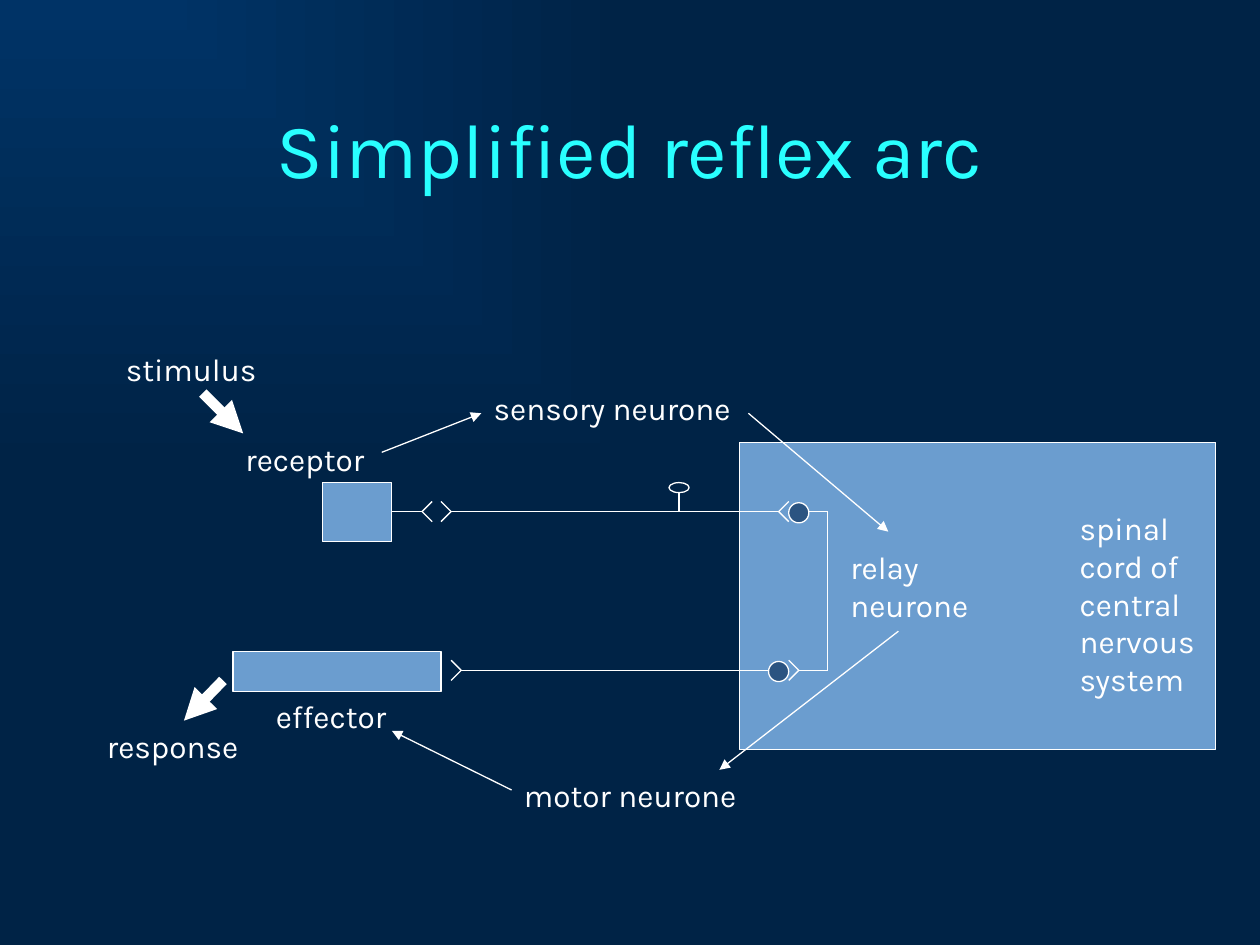
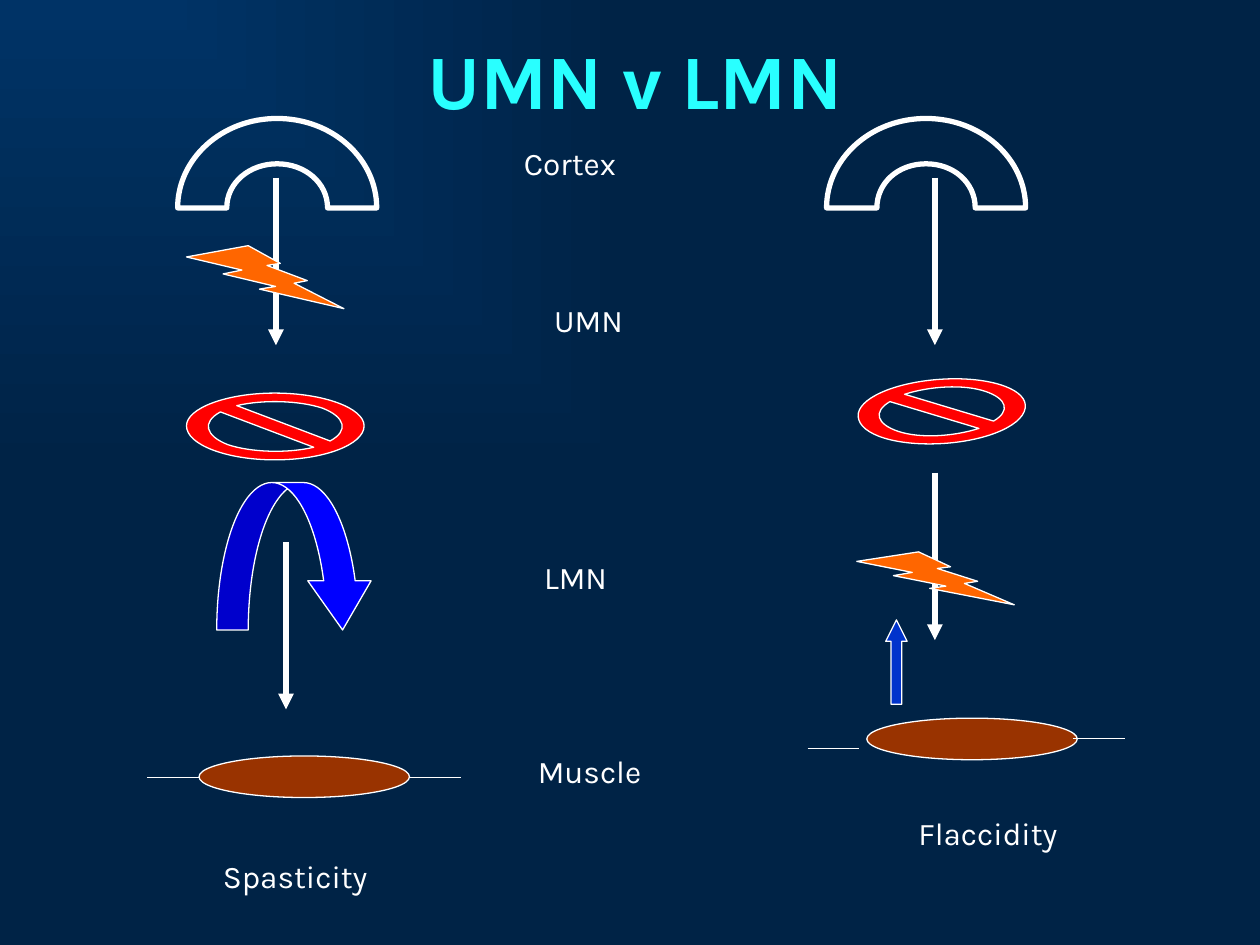
"""Build two slides on reflex arcs and on upper versus lower motor neurone lesions."""
from dataclasses import dataclass
from math import ceil, cos, radians, sin, tan

from lxml import etree
from pptx import Presentation
from pptx.dml.color import RGBColor
from pptx.enum.shapes import MSO_CONNECTOR, MSO_SHAPE
from pptx.enum.text import MSO_ANCHOR, PP_ALIGN
from pptx.oxml import parse_xml
from pptx.oxml.ns import nsdecls, qn
from pptx.util import Inches, Pt


@dataclass(frozen=True)
class Theme:
    font: str = "Karla"
    title_size: int = 44
    label_size: int = 18
    thin: float = 0.75
    medium: float = 3
    heavy: float = 6
    glow: str = "003366"
    night: str = "002346"
    title: str = "29FFFF"
    ink: str = "FFFFFF"
    tissue: str = "6B9DCF"
    cell_body: str = "2B5481"
    muscle: str = "993300"
    lesion: str = "FF6600"
    blocked: str = "FF0000"
    hyperreflexia: str = "0000FF"
    weak_reflex: str = "0033CC"


THEME = Theme()
WIDTH, HEIGHT = Inches(10), Inches(7.5)
COLUMNS = 1000
CELL = WIDTH // COLUMNS

SENSORY_ROW, MOTOR_ROW = 406, 532
BRANCH = 8

REFLEX_TITLE = ("Simplified reflex arc", (50, 42, 900, 150), False)
REFLEX_LABELS = [
    ("stimulus", (90, 273, 126, 40)),
    ("receptor", (185, 344, 134, 40)),
    ("sensory neurone", (382, 304, 291, 40)),
    ("spinal cord of central nervous system", (847, 399, 134, 160)),
    ("relay neurone", (665, 430, 149, 70)),
    ("motor neurone", (406, 611, 228, 40)),
    ("effector", (209, 548, 142, 40)),
    ("response", (75, 572, 165, 40)),
]
TISSUES = [
    (587, 351, 378, 244),
    (256, 383, 55, 47),
    (185, 517, 165, 32),
]
NERVE_FIBRES = [
    (311, SENSORY_ROW, 335, SENSORY_ROW),
    (358, SENSORY_ROW, 618, SENSORY_ROW),
    (539, 391, 539, SENSORY_ROW),
    (642, SENSORY_ROW, 657, SENSORY_ROW),
    (657, SENSORY_ROW, 657, MOTOR_ROW),
    (657, MOTOR_ROW, 634, MOTOR_ROW),
    (610, MOTOR_ROW, 366, MOTOR_ROW),
]
FORKS = [
    (335, SENSORY_ROW, BRANCH),
    (358, SENSORY_ROW, -BRANCH),
    (618, SENSORY_ROW, BRANCH),
    (634, MOTOR_ROW, -BRANCH),
    (366, MOTOR_ROW, -BRANCH),
]
CELL_BODIES = [
    ((531, 383, 16, 8), None),
    ((626, SENSORY_ROW - 7, 16, 16), THEME.cell_body),
    ((610, MOTOR_ROW - 7, 16, 16), THEME.cell_body),
]
SIGNAL_ARROWS = [
    (303, 359, 382, 328),
    (594, 328, 705, 422),
    (713, 501, 571, 611),
    (406, 627, 311, 580),
]
OUTSIDE_ARROWS = [(161, 312, 193, 344), (177, 540, 146, 572)]

LESION_TITLE = ("UMN v LMN", (50, 0, 908, 125), True)
LESION_LABELS = [
    ("Cortex", (406, 109, 117, 50)),
    ("UMN", (430, 234, 117, 50)),
    ("LMN", (422, 438, 117, 50)),
    ("Muscle", (417, 592, 133, 50)),
    ("Spasticity", (167, 675, 217, 40)),
    ("Flaccidity", (719, 641, 217, 40)),
]
CORTEX_SIZE = (158, 142)
NEURONE_LENGTH = 133
MUSCLE_SIZE = (167, 33)
TENDON_LENGTH = 41
PATHWAYS = [
    {
        "cortex": (141, 94),
        "neurones": [(219, 141), (227, 430)],
        "muscle": (158, 600),
        "tendons": [(117, 617), (325, 617)],
        "lesion": (148, 195, 125, 50),
        "reflex": (MSO_SHAPE.CURVED_DOWN_ARROW, (172, 383, 125, 117),
                   (0.214, 0.429, 0.333), THEME.hyperreflexia),
        "blocked": ((148, 312, 141, 53), 0),
    },
    {
        "cortex": (656, 94),
        "neurones": [(742, 141), (742, 375)],
        "muscle": (688, 570),
        "tendons": [(641, 594), (852, 586)],
        "lesion": (680, 438, 125, 42),
        "reflex": (MSO_SHAPE.UP_ARROW, (703, 492, 17, 67),
                   (0.5, 1), THEME.weak_reflex),
        "blocked": ((681, 301, 133, 51), -3.9),
    },
]


def cells(*lengths):
    return [round(length * CELL) for length in lengths]


def paint(shape, fill, weight=THEME.thin):
    shape.shadow.inherit = False
    if fill:
        shape.fill.solid()
        shape.fill.fore_color.rgb = RGBColor.from_string(fill)
    else:
        shape.fill.background()
    shape.line.color.rgb = RGBColor.from_string(THEME.ink)
    shape.line.width = Pt(weight)
    return shape


def add_preset(slide, preset, box, fill, adjustments=()):
    shape = paint(slide.shapes.add_shape(preset, *cells(*box)), fill)
    for index, value in enumerate(adjustments):
        shape.adjustments[index] = value


def add_line(slide, ends, weight=THEME.thin, arrow=False):
    line = slide.shapes.add_connector(MSO_CONNECTOR.STRAIGHT, *cells(*ends))
    line.line.color.rgb = RGBColor.from_string(THEME.ink)
    line.line.width = Pt(weight)
    if arrow:
        etree.SubElement(line.line._get_or_add_ln(), qn("a:tailEnd"), type="triangle")
    etree.SubElement(line._element.spPr, qn("a:effectLst"))


def add_text(slide, text, box, size=THEME.label_size, color=THEME.ink, bold=False):
    frame = slide.shapes.add_textbox(*cells(*box)).text_frame
    frame.word_wrap = True
    frame.text = text
    font = frame.paragraphs[0].runs[0].font
    font.name, font.size, font.bold = THEME.font, Pt(size), bold
    font.color.rgb = RGBColor.from_string(color)
    return frame


def add_labels(slide, labels):
    for text, box in labels:
        add_text(slide, text, box)


def add_title(slide, text, box, bold):
    frame = add_text(slide, text, box, THEME.title_size, THEME.title, bold)
    frame.vertical_anchor = MSO_ANCHOR.MIDDLE
    frame.paragraphs[0].alignment = PP_ALIGN.CENTER


def arc(box, share, start, end):
    left, top, width, height = box
    pieces = ceil(abs(end - start) / 90)
    step = radians((end - start) / pieces)
    pull = 4 / 3 * tan(step / 4)
    units = [(cos(radians(start)), sin(radians(start)))]
    for piece in range(pieces):
        begin = radians(start) + piece * step
        finish = begin + step
        units += [(cos(begin) - pull * sin(begin), sin(begin) + pull * cos(begin)),
                  (cos(finish) + pull * sin(finish), sin(finish) - pull * cos(finish)),
                  (cos(finish), sin(finish))]
    return [(left + width / 2 * (1 + share * x), top + height / 2 * (1 + share * y))
            for x, y in units]


def add_outline(slide, contours, fill, weight=THEME.thin):
    builder = slide.shapes.build_freeform(*contours[0][0][0], scale=CELL)
    for index, arcs in enumerate(contours):
        points = sum(arcs, [])
        if index:
            builder.move_to(*points[0])
        builder.add_line_segments(points[1:], close=True)
    shape = paint(builder.convert_to_shape(), fill, weight)
    outline = next(shape._element.iter(qn("a:path")))
    steps = iter(list(outline))
    for arcs in contours:
        for points in arcs:
            next(steps)
            for _ in range(len(points) // 3):
                curve, *rest = (next(steps) for _ in range(3))
                curve.tag = qn("a:cubicBezTo")
                for step in rest:
                    curve.append(step[0])
                    outline.remove(step)
        next(steps)
    return shape, outline


def add_cortex(slide, corner):
    box = (*corner, *CORTEX_SIZE)
    shape, outline = add_outline(
        slide, [[arc(box, 1, 180, 360), arc(box, 0.5, 360, 180)]], None, THEME.medium)
    shape.height *= 2
    outline.set("h", str(2 * int(outline.get("h"))))


def add_blocked_sign(slide, box, rotation):
    contours = [[arc(box, 1, 0, 360)], [arc(box, 0.75, 35, -125)],
                [arc(box, 0.75, 215, 55)]]
    shape, _ = add_outline(slide, contours, THEME.blocked)
    shape.rotation = rotation


def add_slide(deck, title):
    slide = deck.slides.add_slide(deck.slide_layouts[6])
    slide.background.fill.solid()
    properties = slide.background._cSld.bg.bgPr
    stops = "".join(f'<a:gs pos="{position}"><a:srgbClr val="{color}"/></a:gs>'
                    for position, color in ((0, THEME.glow), (100000, THEME.night)))
    properties.replace(properties[0], parse_xml(
        f'<a:gradFill {nsdecls("a")} rotWithShape="0"><a:gsLst>{stops}</a:gsLst>'
        '<a:path path="rect"><a:fillToRect r="100000" b="100000"/></a:path></a:gradFill>'))
    add_title(slide, *title)
    return slide


def build_reflex_arc(deck):
    slide = add_slide(deck, REFLEX_TITLE)
    for box in TISSUES:
        add_preset(slide, MSO_SHAPE.RECTANGLE, box, THEME.tissue)
    for ends in NERVE_FIBRES:
        add_line(slide, ends)
    for tip, row, reach in FORKS:
        for spread in (-BRANCH, BRANCH):
            add_line(slide, (tip, row, tip + reach, row + spread))
    for box, fill in CELL_BODIES:
        add_preset(slide, MSO_SHAPE.OVAL, box, fill)
    for ends in SIGNAL_ARROWS:
        add_line(slide, ends, arrow=True)
    for ends in OUTSIDE_ARROWS:
        add_line(slide, ends, THEME.heavy, arrow=True)
    add_labels(slide, REFLEX_LABELS)


def build_lesions(deck):
    slide = add_slide(deck, LESION_TITLE)
    for pathway in PATHWAYS:
        for column, row in pathway["neurones"]:
            add_line(slide, (column, row, column, row + NEURONE_LENGTH),
                     THEME.medium, arrow=True)
        add_cortex(slide, pathway["cortex"])
        add_preset(slide, MSO_SHAPE.OVAL, (*pathway["muscle"], *MUSCLE_SIZE), THEME.muscle)
        add_preset(slide, MSO_SHAPE.LIGHTNING_BOLT, pathway["lesion"], THEME.lesion)
        preset, box, adjustments, fill = pathway["reflex"]
        add_preset(slide, preset, box, fill, adjustments)
        add_blocked_sign(slide, *pathway["blocked"])
        for column, row in pathway["tendons"]:
            add_line(slide, (column, row, column + TENDON_LENGTH, row))
    add_labels(slide, LESION_LABELS)


def main():
    deck = Presentation()
    deck.slide_width, deck.slide_height = WIDTH, HEIGHT
    build_reflex_arc(deck)
    build_lesions(deck)
    deck.save("out.pptx")


if __name__ == "__main__":
    main()
